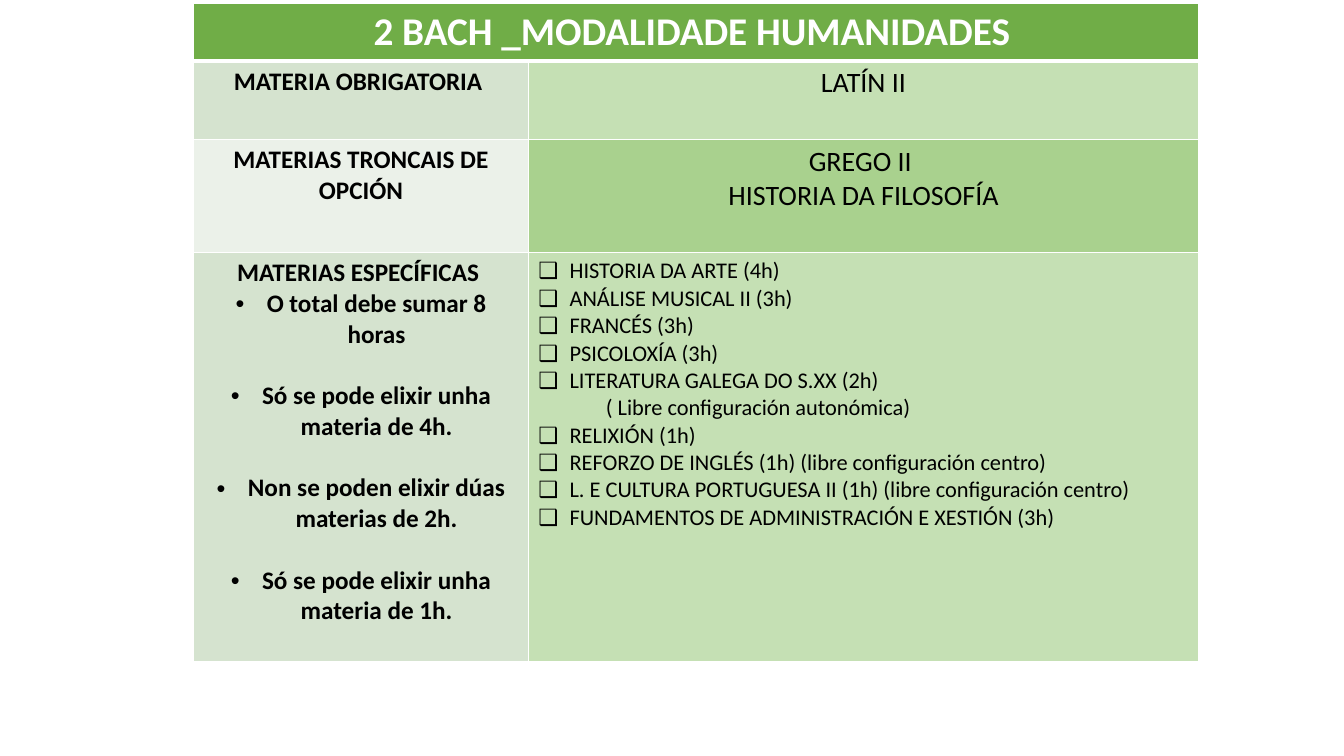
from dataclasses import dataclass

from lxml.etree import SubElement
from pptx import Presentation
from pptx.dml.color import RGBColor as RGB
from pptx.enum.text import PP_ALIGN as Align
from pptx.oxml.ns import qn
from pptx.util import Inches, Pt

# Content: each cell is a list of (bullet, text) lines
TITLE = [("", "2 BACH _MODALIDADE HUMANIDADES ")]
MANDATORY = [("", "MATERIA OBRIGATORIA ")], [("", "LATÍN II")]
CORE = ([("", "MATERIAS TRONCAIS DE OPCIÓN")],
        [("", "GREGO II "), ("", "HISTORIA DA FILOSOFÍA")])
RULES = [("", "MATERIAS ESPECÍFICAS ")] + [("•", rule) for rule in (
    "O total debe sumar 8 horas",
    "Só se pode elixir unha materia de 4h.",
    "Non se poden elixir dúas materias de 2h.",
    "Só se pode elixir unha materia de 1h.",
)]
SUBJECTS = [
    ("❑", "HISTORIA DA ARTE (4h)"),
    ("❑", "ANÁLISE MUSICAL II (3h)"),
    ("❑", "FRANCÉS (3h)"),
    ("❑", "PSICOLOXÍA (3h)"),
    ("❑", "LITERATURA GALEGA DO S.XX (2h)"),
    ("", "( Libre configuración autonómica)"),
    ("❑", "RELIXIÓN (1h)"),
    ("❑", "REFORZO DE INGLÉS (1h) (libre configuración centro)"),
    ("❑", "L. E CULTURA PORTUGUESA II (1h) (libre configuración centro)"),
    ("❑", "FUNDAMENTOS DE ADMINISTRACIÓN E XESTIÓN (3h)"),
]


@dataclass(frozen=True)
class Theme:
    font: str = "Calibri"
    white: str = "FFFFFF"
    black: str = "000000"
    header: str = "70AD47"
    label: str = "D5E3CF"
    label_alt: str = "EBF1E9"
    light: str = "C5E0B4"
    medium: str = "A9D18E"
    title_size: int = 28
    label_size: int = 18
    option_size: int = 20
    subject_size: int = 16
    rule_gap: int = 22


THEME = Theme()
SLIDE_W, SLIDE_H = 13.33, 7.5
LEFT, TOP = 1.92, 0.03
COLUMNS = (3.32, 6.65)
ROWS = (0.57, 0.78, 1.12, 4.06)
HANG, NOTE_INDENT = 0.31, 0.67


def set_borders(cell, top, bottom):
    properties = cell._tc.get_or_add_tcPr()
    for side, width in (("L", 1), ("R", 1), ("T", top), ("B", bottom)):
        line = SubElement(properties, qn(f"a:ln{side}"), w=str(Pt(width)))
        fill = SubElement(line, qn("a:solidFill"))
        SubElement(fill, qn("a:srgbClr"), val=THEME.white)


def set_indent(paragraph, bullet, margin, first=0):
    properties = paragraph._p.get_or_add_pPr()
    properties.set("marL", str(Inches(margin)))
    properties.set("indent", str(Inches(first)))
    if bullet:
        SubElement(properties, qn("a:buFont"), typeface="Arial")
        SubElement(properties, qn("a:buChar"), char=bullet)


def write_cell(cell, lines, fill, size, bold=False, color=THEME.black,
               align=Align.CENTER):
    cell.fill.solid()
    cell.fill.fore_color.rgb = RGB.from_string(fill)
    frame = cell.text_frame
    for index, (bullet, text) in enumerate(lines):
        paragraph = frame.paragraphs[0] if index == 0 else frame.add_paragraph()
        paragraph.text = text
        paragraph.alignment = align
        if bullet:
            set_indent(paragraph, bullet, HANG, -HANG)
        elif align == Align.LEFT:
            set_indent(paragraph, bullet, NOTE_INDENT)
        # Rules stand one line apart
        if bullet and align == Align.CENTER:
            paragraph.space_after = Pt(THEME.rule_gap)
        font = paragraph.font
        font.name, font.size, font.bold = THEME.font, Pt(size), bold
        font.color.rgb = RGB.from_string(color)


# Slide and table grid
deck = Presentation()
deck.slide_width, deck.slide_height = Inches(SLIDE_W), Inches(SLIDE_H)
slide = deck.slides.add_slide(deck.slide_layouts[6])
table = slide.shapes.add_table(
    len(ROWS), len(COLUMNS), Inches(LEFT), Inches(TOP),
    Inches(sum(COLUMNS)), Inches(sum(ROWS))).table
table.horz_banding = False
for column, width in zip(table.columns, COLUMNS):
    column.width = Inches(width)
for number, (row, height) in enumerate(zip(table.rows, ROWS)):
    row.height = Inches(height)
    for cell in row.cells:
        set_borders(cell, top=3 if number == 1 else 1,
                    bottom=3 if number == 0 else 1)

# Header across both columns
header = table.cell(0, 0)
header.merge(table.cell(0, 1))
write_cell(header, TITLE, THEME.header, THEME.title_size, True, THEME.white)

# Labels on the left, subjects on the right
body = (
    (*MANDATORY, THEME.label, THEME.light, THEME.option_size, Align.CENTER),
    (*CORE, THEME.label_alt, THEME.medium, THEME.option_size, Align.CENTER),
    (RULES, SUBJECTS, THEME.label, THEME.light, THEME.subject_size, Align.LEFT),
)
for number, (label, subjects, label_fill, fill, size, align) in enumerate(body, 1):
    write_cell(table.cell(number, 0), label, label_fill, THEME.label_size, True)
    write_cell(table.cell(number, 1), subjects, fill, size, align=align)

deck.save("out.pptx")
